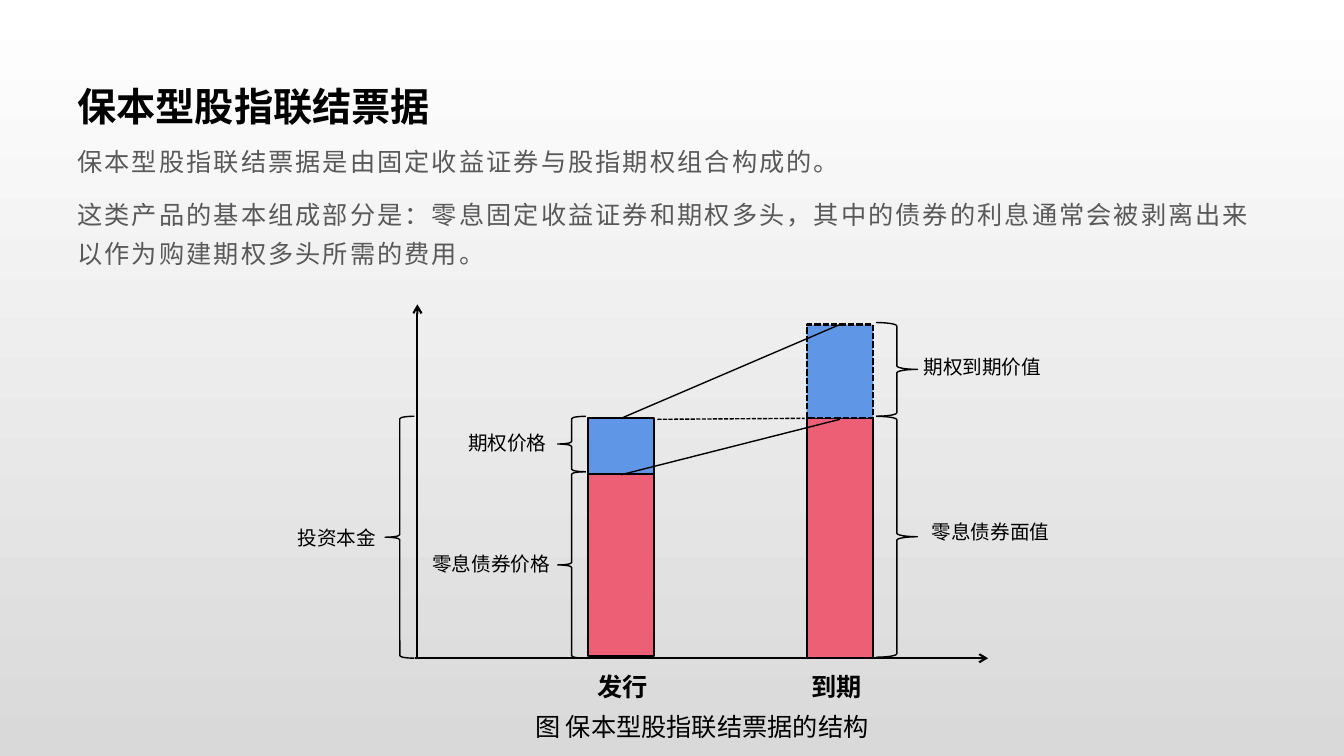
from pptx import Presentation
from pptx.dml.color import RGBColor
from pptx.enum.dml import MSO_LINE
from pptx.enum.shapes import MSO_CONNECTOR, MSO_SHAPE
from pptx.enum.text import MSO_ANCHOR, PP_ALIGN
from pptx.oxml.ns import qn
from pptx.util import Inches, Pt
from lxml import etree

BLACK, GRAY, RED, BLUE = "000000", "595959", "EC5F74", "6096E6"


def paint(color, hex_color):
    color.rgb = RGBColor.from_string(hex_color)


def add_text(page, area, lines, size, color=BLACK, bold=False, align=PP_ALIGN.LEFT):
    box = page.shapes.add_textbox(*[Inches(value) for value in area])
    box.text_frame.word_wrap = True
    box.text_frame.text = "\n".join(lines)
    for para in box.text_frame.paragraphs:
        para.alignment = align
        para.font.name = "Arial"
        para.font.size = Pt(size)
        para.font.bold = bold
        paint(para.font.color, color)
    return box


deck = Presentation()
deck.slide_width, deck.slide_height = Inches(13.33), Inches(7.5)
page = deck.slides.add_slide(deck.slide_layouts[6])

# Background gradient, white at the top
backdrop = page.background.fill
backdrop.gradient()
backdrop.gradient_angle = 270
for stop, position, shade in zip(backdrop.gradient_stops, (0, 1), ("FFFFFF", "D9D9D9")):
    stop.position = position
    paint(stop.color, shade)

# Title and body
title = add_text(page, (0.67, 0.67, 12, 0.77), ["保本型股指联结票据"], 28, bold=True)
title.text_frame.vertical_anchor = MSO_ANCHOR.MIDDLE
body = add_text(page, (0.67, 1.31, 12, 1.5), [
    "保本型股指联结票据是由固定收益证券与股指期权组合构成的。",
    "这类产品的基本组成部分是：零息固定收益证券和期权多头，其中的债券的利息通常会被剥离出来以作为购建期权多头所需的费用。",
], 18, GRAY)
for para in body.text_frame.paragraphs:
    para.line_spacing = 1.3
    para.space_after = Pt(10)
    for span in para.runs:
        span.font._element.set("spc", "150")

# Bars: left, top, height, fill, dashed outline
bars = [
    (5.83, 4.68, 1.83, RED, False),
    (5.83, 4.15, 0.55, BLUE, False),
    (8, 4.15, 2.38, RED, False),
    (8, 3.22, 0.93, BLUE, True),
]
for left, top, height, color, dashed in bars:
    bar = page.shapes.add_shape(
        MSO_SHAPE.RECTANGLE, Inches(left), Inches(top), Inches(0.66), Inches(height))
    bar.shadow.inherit = False
    bar.fill.solid()
    paint(bar.fill.fore_color, color)
    paint(bar.line.color, BLACK)
    bar.line.width = Pt(1.5)
    if dashed:
        bar.line.dash_style = MSO_LINE.SQUARE_DOT

# Links between the bars, then the axes: ends, width, dashed, arrow
lines = [
    ((6.52, 4.16, 7.98, 4.15), 1, True, False),
    ((6.16, 4.71, 8.33, 4.16), 1, False, False),
    ((6.16, 4.15, 8.33, 3.22), 1, False, False),
    ((4.12, 6.53, 9.8, 6.53), 1.5, False, True),
    ((4.14, 6.53, 4.14, 3.02), 1.5, False, True),
]
for ends, width, dashed, arrow in lines:
    line = page.shapes.add_connector(
        MSO_CONNECTOR.STRAIGHT, *[Inches(value) for value in ends])
    paint(line.line.color, BLACK)
    line.line.width = Pt(width)
    if dashed:
        line.line.dash_style = MSO_LINE.SQUARE_DOT
    if arrow:
        etree.SubElement(line.line._get_or_add_ln(), qn("a:tailEnd"), type="arrow")
    etree.SubElement(line._element.spPr, qn("a:effectLst"))

# Braces
braces = [
    (MSO_SHAPE.RIGHT_BRACE, (8.69, 3.2, 0.41, 0.93)),
    (MSO_SHAPE.RIGHT_BRACE, (8.69, 4.13, 0.41, 2.39)),
    (MSO_SHAPE.LEFT_BRACE, (5.53, 4.13, 0.28, 0.55)),
    (MSO_SHAPE.LEFT_BRACE, (5.53, 4.68, 0.28, 1.85)),
    (MSO_SHAPE.LEFT_BRACE, (3.82, 4.13, 0.29, 2.4)),
]
for kind, area in braces:
    brace = page.shapes.add_shape(kind, *[Inches(value) for value in area])
    brace.shadow.inherit = False
    brace.fill.background()
    paint(brace.line.color, BLACK)
    brace.line.width = Pt(1)

# Brace labels
labels = [
    ("期权到期价值", (9.06, 3.47, 2.02, 0.34), PP_ALIGN.LEFT),
    ("零息债券面值", (9.14, 5.11, 1.83, 0.34), PP_ALIGN.LEFT),
    ("期权价格", (4.18, 4.23, 1.34, 0.34), PP_ALIGN.RIGHT),
    ("零息债券价格", (4.19, 5.43, 1.4, 0.34), PP_ALIGN.LEFT),
    ("投资本金", (2.43, 5.17, 1.4, 0.34), PP_ALIGN.RIGHT),
]
for label, area, align in labels:
    add_text(page, area, [label], 14, align=align)

# Axis labels and caption
for label, left in (("发行", 5.83), ("到期", 7.95)):
    add_text(page, (left, 6.61, 0.92, 0.4), [label], 18, bold=True)
add_text(page, (4.27, 7.01, 5.38, 0.4), ["图 保本型股指联结票据的结构"], 18,
         align=PP_ALIGN.CENTER)

deck.save("out.pptx")
